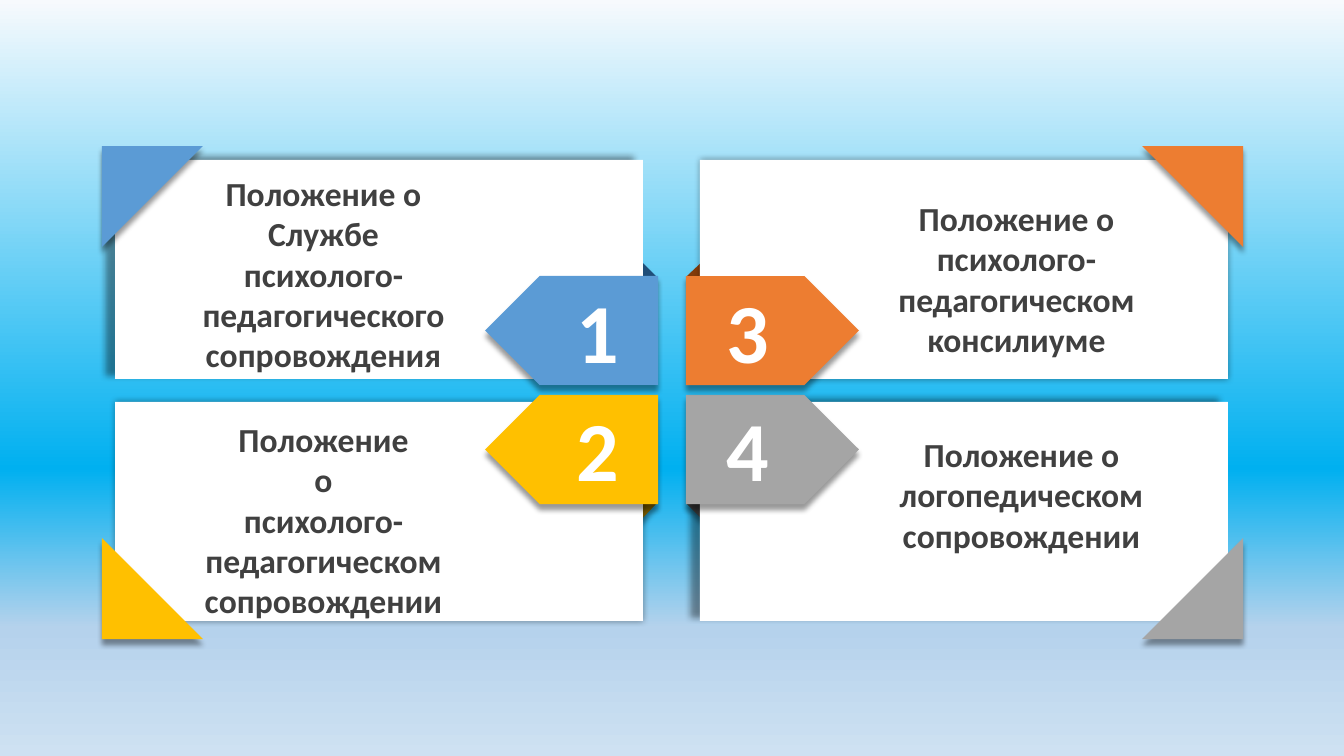
from lxml import etree
from pptx import Presentation
from pptx.dml.color import RGBColor
from pptx.enum.shapes import MSO_SHAPE as Preset
from pptx.enum.text import PP_ALIGN as Align
from pptx.oxml.ns import qn
from pptx.util import Emu, Pt

EMU_PER_PX = 12192000 / 1344
COLORS = {
    "white": "FFFFFF", "text": "404040", "shadow": "000000",
    "blue": "5B9BD5", "blue_fold": "1F4E79",
    "yellow": "FFC000", "yellow_fold": "806000",
    "orange": "ED7D31", "orange_fold": "843C0B",
    "gray": "A5A5A5", "gray_fold": "525252",
    "sky_top": "F7FAFD", "sky": "00B0F0", "haze": "B5D2EC", "sky_bottom": "CEE1F2",
}


def px(length):
    return Emu(round(length * EMU_PER_PX))


class Canvas:
    font_name = "Calibri"

    def __init__(self, slide):
        self.slide = slide
        self.shapes = slide.shapes

    def background(self, stops):
        fill = self.slide.background.fill
        fill.gradient()
        fill.gradient_angle = 270
        stop_list = self.slide.element.find(".//" + qn("a:gsLst"))
        for stop in list(stop_list):
            stop_list.remove(stop)
        for percent, color in stops:
            stop = etree.SubElement(stop_list, qn("a:gs"), pos=str(percent * 1000))
            etree.SubElement(stop, qn("a:srgbClr"), val=COLORS[color])

    def finish(self, shape, color, blur=4, distance=4, direction=90):
        shape.fill.solid()
        shape.fill.fore_color.rgb = RGBColor.from_string(COLORS[color])
        shape.line.fill.background()
        shape.shadow.inherit = False
        effects = shape.element.spPr.find(qn("a:effectLst"))
        shadow = etree.SubElement(
            effects, qn("a:outerShdw"), blurRad=str(Pt(blur)), dist=str(Pt(distance)),
            dir=str(direction * 60000), algn="ctr", rotWithShape="0")
        tint = etree.SubElement(shadow, qn("a:srgbClr"), val=COLORS["shadow"])
        etree.SubElement(tint, qn("a:alpha"), val="40000")

    def shape(self, preset, box, color, rotation=0, **shadow):
        shape = self.shapes.add_shape(preset, *map(px, box))
        shape.rotation = rotation
        self.finish(shape, color, **shadow)

    def triangle(self, points, color):
        builder = self.shapes.build_freeform(*points[0], scale=EMU_PER_PX)
        builder.add_line_segments(points[1:])
        self.finish(builder.convert_to_shape(), color)

    def text(self, box, lines, size, color):
        frame = self.shapes.add_textbox(*map(px, box)).text_frame
        frame.word_wrap = True
        frame.text = "\n".join(lines)
        for paragraph in frame.paragraphs:
            paragraph.alignment = Align.CENTER
            paragraph.font.name = self.font_name
            paragraph.font.size = Pt(size)
            paragraph.font.bold = True
            paragraph.font.color.rgb = RGBColor.from_string(COLORS[color])


CARD_X, CARD_Y = (115, 700), (160, 402)
CORNER_X, CORNER_Y = (102, 1142), (146, 538)
TAG_X, TAG_Y = (485, 686), (276, 395)
NUMBER_X, NUMBER_Y = (553, 703), (275, 393)
FOLD_INNER_X, FOLD_OUTER_X = (640, 704), (657, 686)
FOLD_Y, FOLD_TIP_Y = (277, 503), (260, 521)
CORNER_ROTATION = {(0, 0): 90, (1, 0): 180, (1, 1): 270, (0, 1): 0}

REGULATIONS = [
    (0, 1, "2", "yellow", (165, 414, 317, 214),
     ["Положение", "о", "психолого-педагогическом сопровождении"]),
    (1, 1, "4", "gray", (863, 429, 317, 132),
     ["Положение о логопедическом сопровождении"]),
    (0, 0, "1", "blue", (165, 168, 317, 214),
     ["Положение о", "Службе", "психолого-педагогического сопровождения"]),
    (1, 0, "3", "orange", (858, 193, 317, 173),
     ["Положение о психолого-педагогическом консилиуме"]),
]


def main():
    deck = Presentation()
    deck.slide_width, deck.slide_height = px(1344), px(756)
    canvas = Canvas(deck.slides.add_slide(deck.slide_layouts[6]))
    canvas.background([(0, "sky_top"), (62, "sky"), (83, "haze"), (100, "sky_bottom")])

    for column, row, number, color, title_box, title in REGULATIONS:
        inner_x, outer_x, fold_y = FOLD_INNER_X[column], FOLD_OUTER_X[column], FOLD_Y[row]
        canvas.triangle([(inner_x, fold_y), (outer_x, fold_y), (inner_x, FOLD_TIP_Y[row])],
                        color + "_fold")
        canvas.shape(Preset.RECTANGLE, (CARD_X[column], CARD_Y[row], 528, 219), "white",
                     blur=5, distance=7 if column == row else 0, direction=200)
        canvas.shape(Preset.PENTAGON, (TAG_X[column], TAG_Y[row], 173, 109), color,
                     rotation=0 if column else 180)
        canvas.text((NUMBER_X[column], NUMBER_Y[row], 90, 112), [number], 60, "white")
        canvas.text(title_box, title, 24, "text")
        canvas.shape(Preset.RIGHT_TRIANGLE, (CORNER_X[column], CORNER_Y[row], 101, 101), color,
                     rotation=CORNER_ROTATION[column, row])

    deck.save("out.pptx")


if __name__ == "__main__":
    main()
